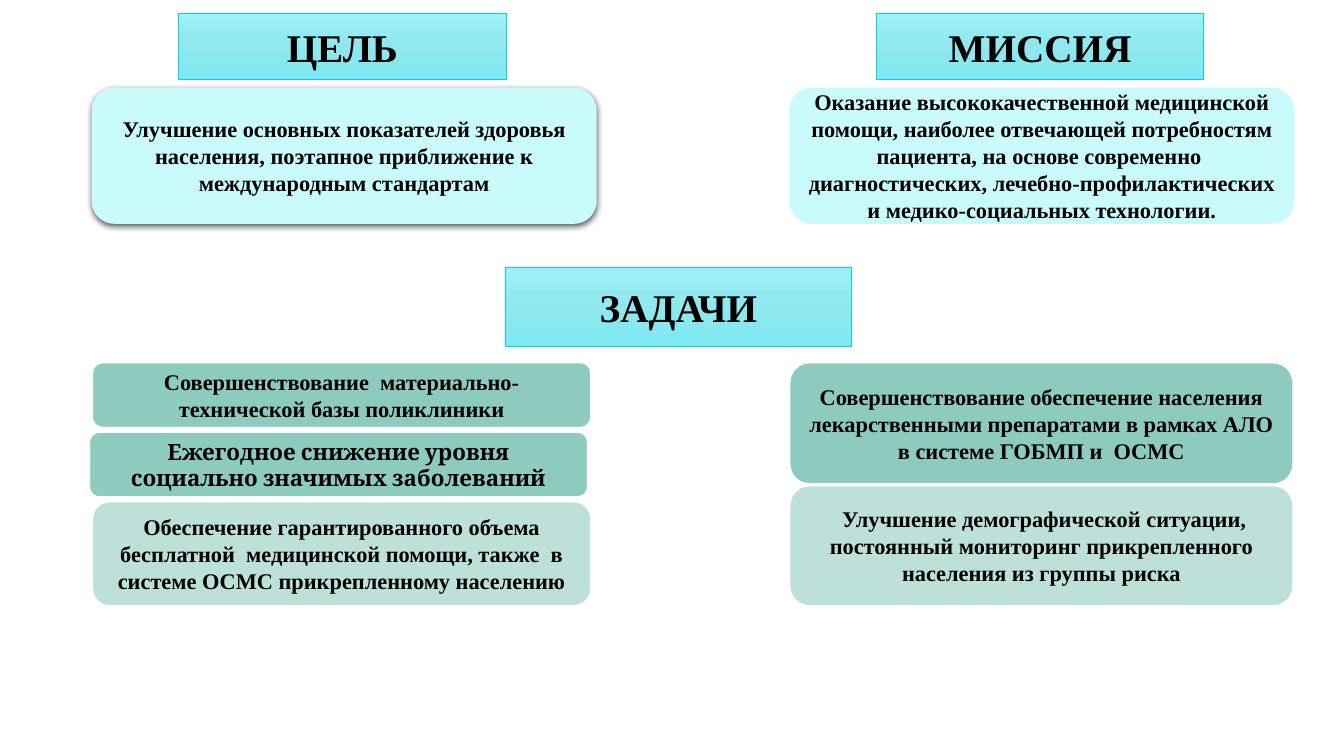
from copy import deepcopy

from lxml.etree import SubElement
from pptx import Presentation
from pptx.dml.color import RGBColor
from pptx.enum.shapes import MSO_SHAPE
from pptx.enum.text import MSO_ANCHOR, PP_ALIGN
from pptx.oxml.ns import qn
from pptx.util import Pt

SERIF = "Times New Roman"
HEADER_STOPS = ("9DF1F8", "90E7EE", "7CE9F1")
HEADER_LINE = "0BD0D9"
CARD_FILL = "C9FAFC"
TASK_DARK = "8DCBBE"
TASK_LIGHT = "BDE1D9"


def color(hex_string):
    return RGBColor.from_string(hex_string)


def add_box(slide, kind, box, text, size, font=SERIF):
    shape = slide.shapes.add_shape(kind, *(Pt(length) for length in box))
    shape.shadow.inherit = False
    frame = shape.text_frame
    frame.word_wrap = True
    frame.vertical_anchor = MSO_ANCHOR.MIDDLE
    paragraph = frame.paragraphs[0]
    paragraph.alignment = PP_ALIGN.CENTER
    run = paragraph.add_run()
    run.text = text
    run.font.name = font
    run.font.size = Pt(size)
    run.font.bold = True
    run.font.color.rgb = color("000000")
    return shape


def set_line(shape, hex_string, width):
    shape.line.color.rgb = color(hex_string)
    shape.line.width = Pt(width)


def add_header(slide, box, text, kind=MSO_SHAPE.RECTANGLE):
    shape = add_box(slide, kind, box, text, 28)
    shape.fill.gradient()
    shape.fill.gradient_angle = 270
    stop_list = shape._element.spPr.find(qn("a:gradFill")).find(qn("a:gsLst"))
    stop_list.insert(1, deepcopy(stop_list[0]))
    for index, stop in enumerate(shape.fill.gradient_stops):
        stop.position = index / 2
        stop.color.rgb = color(HEADER_STOPS[index])
    set_line(shape, HEADER_LINE, 0.5)


def add_shadow(shape):
    effects = shape._element.spPr.find(qn("a:effectLst"))
    shadow = SubElement(effects, qn("a:outerShdw"), blurRad=str(Pt(4.5)),
                        dist=str(Pt(1.5)), dir="5400000", rotWithShape="0")
    shade = SubElement(shadow, qn("a:srgbClr"), val="000000")
    SubElement(shade, qn("a:alpha"), val="63000")


def add_statement(slide, left, top, width, title, text, shadowed=False):
    add_header(slide, (left + 62, top, 234, 47.5), title)
    card = add_box(slide, MSO_SHAPE.ROUNDED_RECTANGLE,
                   (left, top + 53.25, width, 97.2), text, 16)
    card.fill.solid()
    card.fill.fore_color.rgb = color(CARD_FILL)
    card.line.fill.background()
    if shadowed:
        add_shadow(card)


def add_tasks(slide, left, top, width, gap, tasks):
    for text, height, fill, font, shift in tasks:
        task = add_box(slide, MSO_SHAPE.ROUNDED_RECTANGLE,
                       (left + shift, top, width, height), text, 16, font)
        task.fill.solid()
        task.fill.fore_color.rgb = color(fill)
        set_line(task, "FFFFFF", 2.25)
        top += height + gap


def main():
    presentation = Presentation()
    presentation.slide_width = Pt(960)
    presentation.slide_height = Pt(540)
    slide = presentation.slides.add_slide(presentation.slide_layouts[6])

    add_statement(
        slide, 65.5, 9.4, 360.7, "ЦЕЛЬ",
        "Улучшение основных показателей здоровья населения, поэтапное "
        "приближение к международным стандартам", shadowed=True)
    add_statement(
        slide, 563.8, 9.4, 360.7, "МИССИЯ",
        "Оказание высококачественной медицинской помощи, наиболее отвечающей "
        "потребностям пациента, на основе современно  диагностических, "
        "лечебно-профилактических и медико-социальных технологии.")

    add_header(slide, (360.7, 190.8, 247.7, 56.9), "ЗАДАЧИ",
               MSO_SHAPE.FLOWCHART_PROCESS)
    add_tasks(slide, 65.5, 258.5, 357.1, 2.1, [
        ("Совершенствование  материально-технической базы поликлиники",
         47.5, TASK_DARK, SERIF, 0),
        ("Ежегодное снижение уровня социально значимых заболеваний",
         47.5, TASK_DARK, "Cambria", -2.2),
        ("Обеспечение гарантированного объема бесплатной  медицинской помощи, "
         "также  в системе ОСМС прикрепленному населению",
         75.6, TASK_LIGHT, SERIF, 0),
    ])
    add_tasks(slide, 563.5, 258.5, 360.7, 0, [
        ("Совершенствование обеспечение населения лекарственными препаратами "
         "в рамках АЛО в системе ГОБМП и  ОСМС",
         87.8, TASK_DARK, SERIF, 0),
        (" Улучшение демографической ситуации, постоянный мониторинг "
         "прикрепленного населения из группы риска",
         87.1, TASK_LIGHT, SERIF, 0),
    ])
    presentation.save("out.pptx")


if __name__ == "__main__":
    main()
